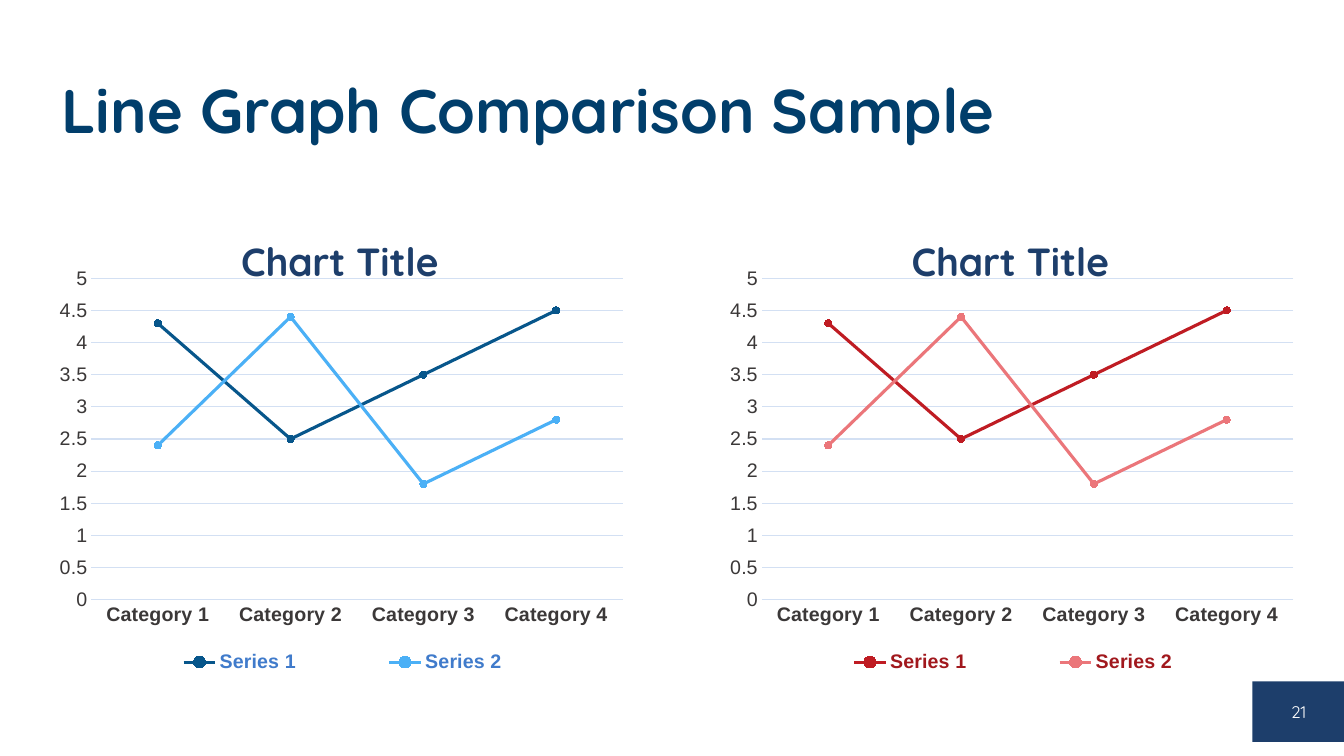
from lxml import etree
from pptx import Presentation
from pptx import util as u
from pptx.chart.data import CategoryChartData
from pptx.dml.color import RGBColor
from pptx.enum import chart as ch
from pptx.enum import shapes, text
from pptx.oxml.ns import qn

PX = 9144  # 100 px to the inch
NAVY, GRID, INK = "1D3E6B", "D3E0F3", "3B3838"
CATEGORIES = ["Category 1", "Category 2", "Category 3", "Category 4"]
VALUES = {"Series 1": [4.3, 2.5, 3.5, 4.5], "Series 2": [2.4, 4.4, 1.8, 2.8]}


def px(*lengths):
    return [u.Emu(length * PX) for length in lengths]


def rgb(hex_colour):
    return RGBColor.from_string(hex_colour)


def style(font, size, colour, name, bold=False):
    font.size, font.name, font.bold = u.Pt(size), name, bold
    font.color.rgb = rgb(colour)


def stroke(line, colour, width):
    line.color.rgb = rgb(colour)
    line.width = u.Pt(width)


def place_part(part, index, **fractions):
    """Give a chart part a fixed place, as fractions of the chart."""
    for old in part.findall(qn("c:layout")):
        part.remove(old)
    layout = etree.Element(qn("c:layout"))
    manual = etree.SubElement(layout, qn("c:manualLayout"))
    if part.tag == qn("c:plotArea"):
        etree.SubElement(manual, qn("c:layoutTarget")).set("val", "inner")
    for mode in ("xMode", "yMode"):
        etree.SubElement(manual, qn("c:" + mode)).set("val", "edge")
    for key, value in fractions.items():
        etree.SubElement(manual, qn("c:" + key)).set("val", str(value))
    part.insert(index, layout)


def add_heading(slide, box):
    heading = slide.shapes.add_textbox(*px(*box)).text_frame
    heading.word_wrap = True
    heading.vertical_anchor = text.MSO_ANCHOR.MIDDLE
    heading.text = "Line Graph Comparison Sample"
    heading.paragraphs[0].line_spacing = 0.9
    style(heading.paragraphs[0].runs[0].font, 44, "013E6B", "Quicksand", True)


def add_page_number(slide, box):
    badge = slide.shapes.add_shape(shapes.MSO_SHAPE.RECTANGLE, *px(*box))
    badge.shadow.inherit = False
    badge.fill.solid()
    badge.fill.fore_color.rgb = rgb(NAVY)
    badge.line.fill.background()
    badge.text_frame.text = "21"
    badge.text_frame.vertical_anchor = text.MSO_ANCHOR.MIDDLE
    number = badge.text_frame.paragraphs[0]
    number.alignment = text.PP_ALIGN.CENTER
    style(number.runs[0].font, 12, "FFFFFF", "Quicksand")


def add_line_graph(slide, box, series_colours, legend_colour):
    data = CategoryChartData()
    data.categories = CATEGORIES
    for name, values in VALUES.items():
        data.add_series(name, values)
    graph = slide.shapes.add_chart(
        ch.XL_CHART_TYPE.LINE_MARKERS, *px(*box), data).chart
    style(graph.font, 10, NAVY, "Lato")

    # Title
    graph.has_title = True
    caption = graph.chart_title.text_frame
    caption.text = "Chart Title"
    style(caption.paragraphs[0].runs[0].font, 28, NAVY, "Quicksand", True)
    place_part(graph.chart_title._element, 1, x=0.32, y=0.05)

    # Axes
    categories, scale = graph.category_axis, graph.value_axis
    for axis in (categories, scale):
        axis.major_tick_mark = axis.minor_tick_mark = ch.XL_TICK_MARK.NONE
        style(axis.tick_labels.font, 14, INK, "Arial", axis is categories)
    stroke(categories.format.line, GRID, 0.75)
    scale.format.line.fill.background()
    stroke(scale.major_gridlines.format.line, GRID, 0.75)
    scale.minimum_scale, scale.maximum_scale, scale.major_unit = 0, 5, 0.5

    # Lines and markers
    for series, colour in zip(graph.plots[0].series, series_colours):
        series.smooth = False
        stroke(series.format.line, colour, 2.25)
        marker = series.marker
        marker.style, marker.size = ch.XL_MARKER_STYLE.CIRCLE, 5
        marker.format.fill.solid()
        marker.format.fill.fore_color.rgb = rgb(colour)
        stroke(marker.format.line, colour, 0.75)
    plot_area = graph.plots[0]._element.getparent()
    place_part(plot_area, 0, x=0.07, y=0.16, w=0.93, h=0.67)

    # Legend
    graph.has_legend = True
    graph.legend.position = ch.XL_LEGEND_POSITION.BOTTOM
    graph.legend.include_in_layout = False
    style(graph.legend.font, 14, legend_colour, "Arial", True)
    place_part(graph.legend._element, 1, x=0.08, y=0.92, w=0.86, h=0.08)


def main():
    deck = Presentation()
    deck.slide_width, deck.slide_height = px(1333, 750)
    slide = deck.slides.add_slide(deck.slide_layouts[6])
    add_heading(slide, (51, 40, 1232, 145))
    add_page_number(slide, (1242, 676, 92, 60))
    add_line_graph(slide, (51, 200, 567, 476), ("07568B", "4BB0F6"), "407BCB")
    add_line_graph(slide, (716, 200, 567, 476), ("BF1C23", "EB767A"), "A1181D")
    deck.save("out.pptx")


if __name__ == "__main__":
    main()
